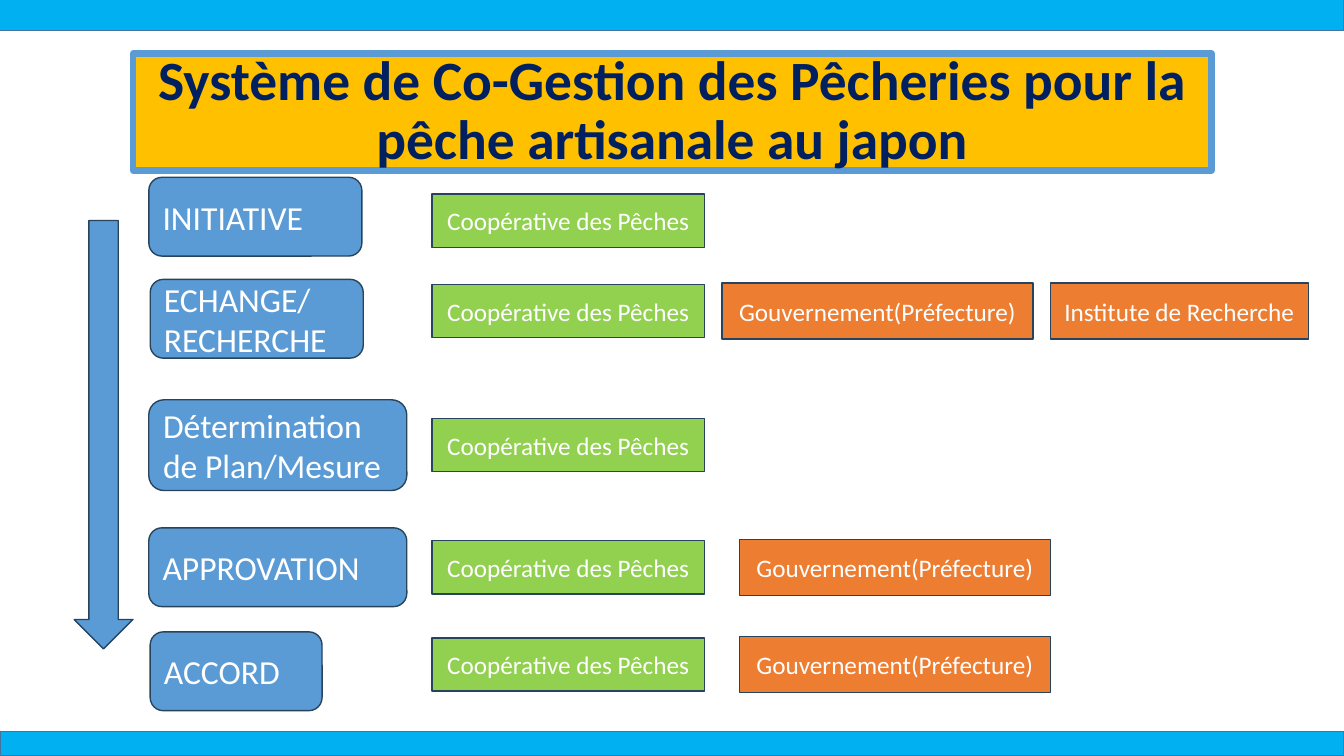
from pptx import Presentation
from pptx.dml.color import RGBColor
from pptx.enum.shapes import MSO_SHAPE
from pptx.enum.text import MSO_ANCHOR, MSO_AUTO_SIZE, PP_ALIGN
from pptx.util import Pt

RECTANGLE = MSO_SHAPE.RECTANGLE
ROUNDED = MSO_SHAPE.ROUNDED_RECTANGLE
DOWN_ARROW = MSO_SHAPE.DOWN_ARROW
LEFT, CENTER = PP_ALIGN.LEFT, PP_ALIGN.CENTER
MIDDLE = MSO_ANCHOR.MIDDLE
NO_AUTOFIT = MSO_AUTO_SIZE.NONE

COLORS = {
    "gold": "FFC000",
    "navy": "002060",
    "blue": "5B9BD5",
    "sky": "00B0F0",
    "sky_edge": "43739E",
    "edge": "28445D",
    "green": "92D050",
    "orange": "ED7D31",
    "white": "FFFFFF",
}


def style_shape(shape, fill, edge, weight):
    shape.fill.solid()
    shape.fill.fore_color.rgb = RGBColor.from_string(COLORS[fill])
    shape.line.color.rgb = RGBColor.from_string(COLORS[edge])
    shape.line.width = Pt(weight)


def write_text(shape, text, align, color, font_format):
    frame = shape.text_frame
    frame.word_wrap = True
    frame.auto_size = NO_AUTOFIT
    frame.vertical_anchor = MIDDLE
    frame.text = text
    for paragraph in frame.paragraphs:
        paragraph.alignment = align
        font = paragraph.runs[0].font
        font.color.rgb = RGBColor.from_string(COLORS[color])
        for name, value in font_format.items():
            setattr(font, name, value)


TITLE_FONT = {"name": "Calibri", "size": Pt(39.6), "bold": True}
STEP_FONT = {"name": "Calibri", "size": Pt(24)}
ACTOR_FONT = {"name": "Calibri", "size": Pt(18)}

presentation = Presentation()
presentation.slide_width = Pt(960)
presentation.slide_height = Pt(540)
slide = presentation.slides.add_slide(presentation.slide_layouts[5])

title = slide.shapes.title
title_box = {"left": Pt(95), "top": Pt(38.3), "width": Pt(770.4), "height": Pt(83.5)}
for name, value in title_box.items():
    setattr(title, name, value)
style_shape(title, "gold", "blue", 4.5)
write_text(
    title,
    "Système de Co-Gestion des Pêcheries pour la pêche artisanale au japon",
    CENTER, "navy", TITLE_FONT,
)
title.text_frame.paragraphs[0].line_spacing = 0.9

decorations = [
    (RECTANGLE, 0, 522.5, 960, 17.5, "sky", "sky_edge"),
    (RECTANGLE, -0.5, -5, 960, 26.7, "sky", "sky_edge"),
    (DOWN_ARROW, 53, 157.5, 42, 306, "blue", "edge"),
]
for kind, left, top, width, height, fill, edge in decorations:
    shape = slide.shapes.add_shape(kind, Pt(left), Pt(top), Pt(width), Pt(height))
    shape.shadow.inherit = False
    style_shape(shape, fill, edge, 1)

COOPERATIVE = ("Coopérative des Pêches", 308.5, 194.7, 38, "green")
GOVERNMENT = ("Gouvernement(Préfecture)", 528.2, 222, 40, "orange")
EARLY_GOVERNMENT = ("Gouvernement(Préfecture)", 515.8, 222, 40, "orange")
INSTITUTE = ("Institute de Recherche", 750.2, 184.3, 40, "orange")

steps = [
    ("INITIATIVE", 106.3, 154.8, 152.2, 56.3, 157.7, [COOPERATIVE]),
    ("ECHANGE/\nRECHERCHE", 107.3, 227.7, 152.2, 56.3, 222.2,
     [COOPERATIVE, EARLY_GOVERNMENT, INSTITUTE]),
    ("Détermination de Plan/Mesure", 106.3, 318, 184.3, 64.8, 318, [COOPERATIVE]),
    ("APPROVATION", 106.3, 405.2, 184.3, 56.3, 405.2, [COOPERATIVE, GOVERNMENT]),
    ("ACCORD", 107.3, 479.5, 122.8, 56.3, 474.7, [COOPERATIVE, GOVERNMENT]),
]
for label, left, middle, width, height, actor_middle, actors in steps:
    boxes = [(ROUNDED, label, left, middle, width, height, "blue", LEFT, STEP_FONT)]
    for actor, actor_left, actor_width, actor_height, fill in actors:
        boxes.append((RECTANGLE, actor, actor_left, actor_middle, actor_width,
                      actor_height, fill, CENTER, ACTOR_FONT))
    for kind, text, x, y, box_width, box_height, fill, align, font_format in boxes:
        shape = slide.shapes.add_shape(
            kind, Pt(x), Pt(y - box_height / 2), Pt(box_width), Pt(box_height)
        )
        shape.shadow.inherit = False
        style_shape(shape, fill, "edge", 1)
        write_text(shape, text, align, "white", font_format)

presentation.save("out.pptx")
